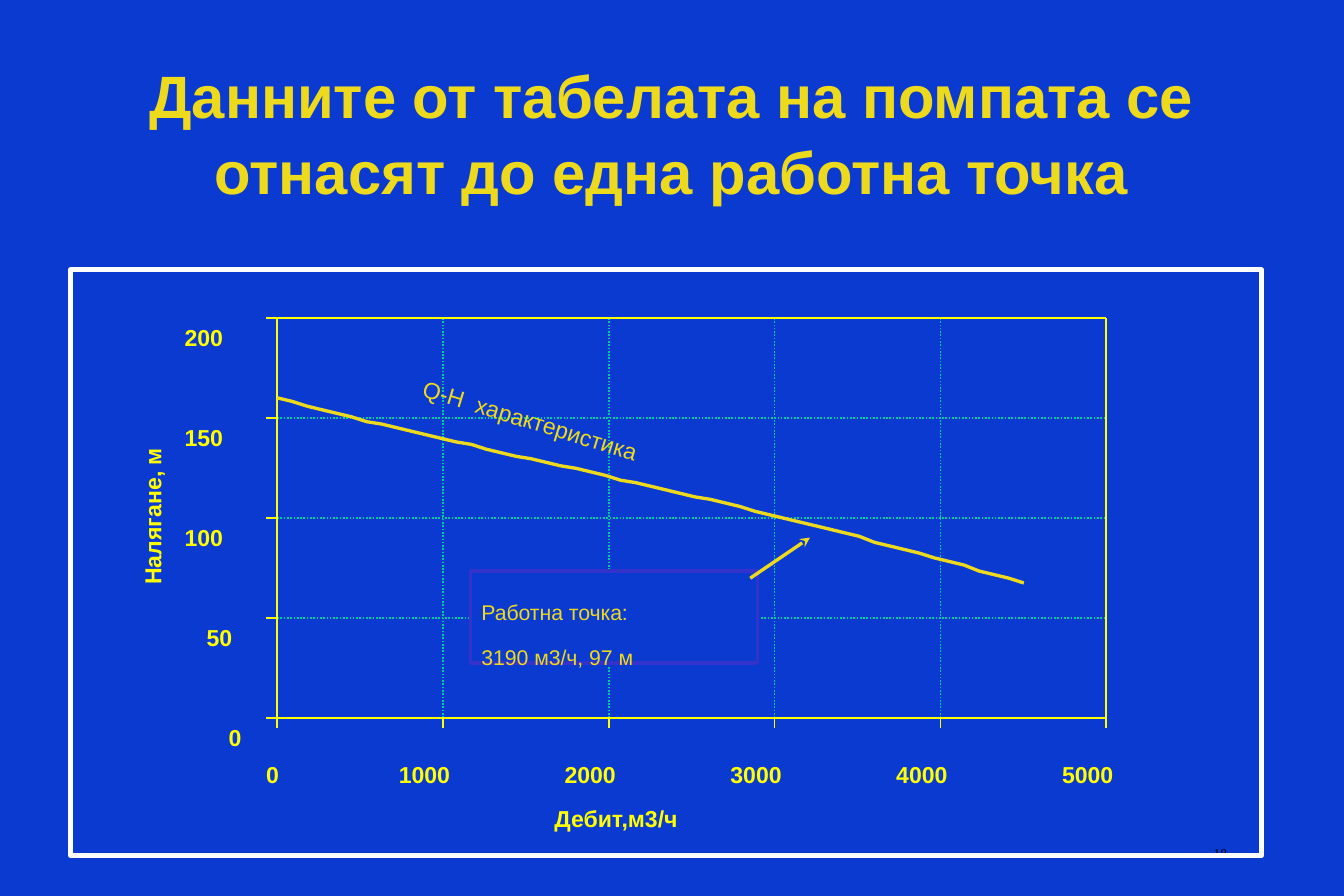
from pptx import Presentation
from pptx.dml.color import RGBColor
from pptx.enum.dml import MSO_LINE
from pptx.enum.shapes import MSO_CONNECTOR, MSO_SHAPE
from pptx.enum.text import MSO_ANCHOR, PP_ALIGN
from pptx.oxml.ns import qn
from pptx.util import Inches, Pt
from lxml import etree

BLUE, GOLD, YELLOW, GREEN = "0B3AD1", "EEDA1C", "FFFF00", "00CC99"

prs = Presentation()
prs.slide_width, prs.slide_height = Inches(11.25), Inches(7.5)
s = prs.slides.add_slide(prs.slide_layouts[5])
s.background.fill.solid()
s.background.fill.fore_color.rgb = RGBColor.from_string(BLUE)


def write(sp, lines, size, color, inset=(0, 0), lowered=True, **fmt):
    """Fill a shape with text; lowered text is set as subscript."""
    tf = sp.text_frame
    tf.word_wrap = True
    tf.vertical_anchor = fmt.pop("anchor", MSO_ANCHOR.TOP)
    tf.margin_left = tf.margin_right = Inches(inset[0])
    tf.margin_top = tf.margin_bottom = Inches(inset[1])
    align, spacing = fmt.pop("align", PP_ALIGN.LEFT), fmt.pop("spacing", 1.0)
    font = {"name": "Arial", "size": Pt(size), "bold": False, **fmt}
    for i, line in enumerate(lines):
        p = tf.add_paragraph() if i else tf.paragraphs[0]
        p.alignment, p.line_spacing = align, spacing
        r = p.add_run()
        r.text = line
        for key, value in font.items():
            setattr(r.font, key, value)
        r.font.color.rgb = RGBColor.from_string(color)
        if lowered:
            r._r.get_or_add_rPr().set("baseline", "-25000")


def line(x1, y1, x2, y2, color=YELLOW, width=1, dash=None):
    c = s.shapes.add_connector(MSO_CONNECTOR.STRAIGHT, *map(Inches, (x1, y1, x2, y2)))
    c.line.color.rgb = RGBColor.from_string(color)
    c.line.width = Pt(width)
    if dash:
        c.line.dash_style = dash
    etree.SubElement(c._element.spPr, qn("a:effectLst"))
    return c


# Title
title = s.shapes.title
title.left, title.top, title.width, title.height = map(Inches, (0.84, 0.47, 9.56, 1.25))
write(title, ["Данните от табелата на помпата се отнасят до една работна точка"], 36, GOLD,
      (0.1, 0.05), lowered=False, bold=True, align=PP_ALIGN.CENTER,
      anchor=MSO_ANCHOR.MIDDLE, spacing=1.05)

# Page number
number = s.shapes.add_textbox(*map(Inches, (8.04, 6.83, 2.33, 0.5)))
write(number, ["18"], 14, "000000", (0.1, 0.05), name="Times New Roman",
      align=PP_ALIGN.RIGHT, anchor=MSO_ANCHOR.MIDDLE)

# White frame
frame = s.shapes.add_shape(MSO_SHAPE.RECTANGLE, *map(Inches, (0.59, 2.26, 9.97, 4.9)))
frame.shadow.inherit = False
frame.fill.background()
frame.line.color.rgb = RGBColor.from_string("FFFFFF")
frame.line.width = Pt(3)

# Plot area: border, grid, ticks
LEFT, TOP, RIGHT, BOTTOM = 2.32, 2.66, 9.26, 6.01
xs = [LEFT + i * (RIGHT - LEFT) / 5 for i in range(6)]
ys = [TOP + i * (BOTTOM - TOP) / 4 for i in range(5)]
for y in ys[1:-1]:
    line(LEFT, y, RIGHT, y, GREEN, dash=MSO_LINE.ROUND_DOT)
for x in xs[1:-1]:
    line(x, BOTTOM, x, TOP, GREEN, dash=MSO_LINE.ROUND_DOT)
for y in (TOP, BOTTOM):
    line(LEFT, y, RIGHT, y)
for x in (LEFT, RIGHT):
    line(x, TOP, x, BOTTOM)
for y in ys:
    line(LEFT - 0.09, y, LEFT, y)
for x in xs:
    line(x, BOTTOM + 0.08, x, BOTTOM)

# Axis values and axis titles
DIGIT = 0.185
labels = [(str(200 - 50 * i), 2.1 - DIGIT * len(str(200 - 50 * i)), y - 0.18)
          for i, y in enumerate(ys)]
labels += [(str(1000 * i), x - DIGIT * len(str(1000 * i)) / 2, 6.14)
           for i, x in enumerate(xs)]
for text, x, y in labels:
    sp = s.shapes.add_textbox(*map(Inches, (x, y, DIGIT * len(text), 0.4)))
    write(sp, [text], 24, YELLOW, bold=True)
for text, x, y, width, turn in (("Налягане, м", 0.14, 3.7, 1.99, 270),
                                ("Дебит,м3/ч", 4.64, 6.51, 1.81, 0)):
    sp = s.shapes.add_textbox(*map(Inches, (x, y, width, 0.4)))
    sp.rotation = turn
    write(sp, [text], 24, YELLOW, bold=True)

# Q-H curve, evenly spaced along the flow axis
curve_y = [3.33, 3.36, 3.4, 3.43, 3.46, 3.49, 3.53, 3.55, 3.58, 3.61, 3.64, 3.67, 3.7,
           3.72, 3.76, 3.79, 3.82, 3.84, 3.87, 3.9, 3.92, 3.95, 3.98, 4.02, 4.04, 4.07,
           4.1, 4.13, 4.16, 4.18, 4.21, 4.24, 4.28, 4.31, 4.34, 4.37, 4.4, 4.43, 4.46,
           4.49, 4.54, 4.57, 4.6, 4.63, 4.67, 4.7, 4.73, 4.78, 4.81, 4.84, 4.88]
points = [(Inches(LEFT + 0.125 * i), Inches(y)) for i, y in enumerate(curve_y)]
builder = s.shapes.build_freeform(*points[0])
builder.add_line_segments(points[1:], close=False)
curve = builder.convert_to_shape()
curve.shadow.inherit = False
curve.fill.background()
curve.line.color.rgb = RGBColor.from_string(GOLD)
curve.line.width = Pt(2)

# Working point box and arrow
box = s.shapes.add_shape(MSO_SHAPE.RECTANGLE, *map(Inches, (3.94, 4.78, 2.4, 0.77)))
box.shadow.inherit = False
box.fill.solid()
box.fill.fore_color.rgb = RGBColor.from_string(BLUE)
box.line.color.rgb = RGBColor.from_string("3333CC")
box.line.width = Pt(2)
write(box, ["Работна точка:", "3190 м3/ч, 97 м"], 22, GOLD, (0.09, 0.04), spacing=0.9)
arrow = line(6.28, 4.84, 6.78, 4.5, GOLD, 2)
etree.SubElement(arrow.line._get_or_add_ln(), qn("a:tailEnd"), type="stealth")

# Curve label
label = s.shapes.add_textbox(*map(Inches, (3.42, 3.33, 3.41, 0.5)))
label.rotation = 17
write(label, ["Q-H  характеристика"], 24, GOLD, (0.1, 0.05))

prs.save("out.pptx")
